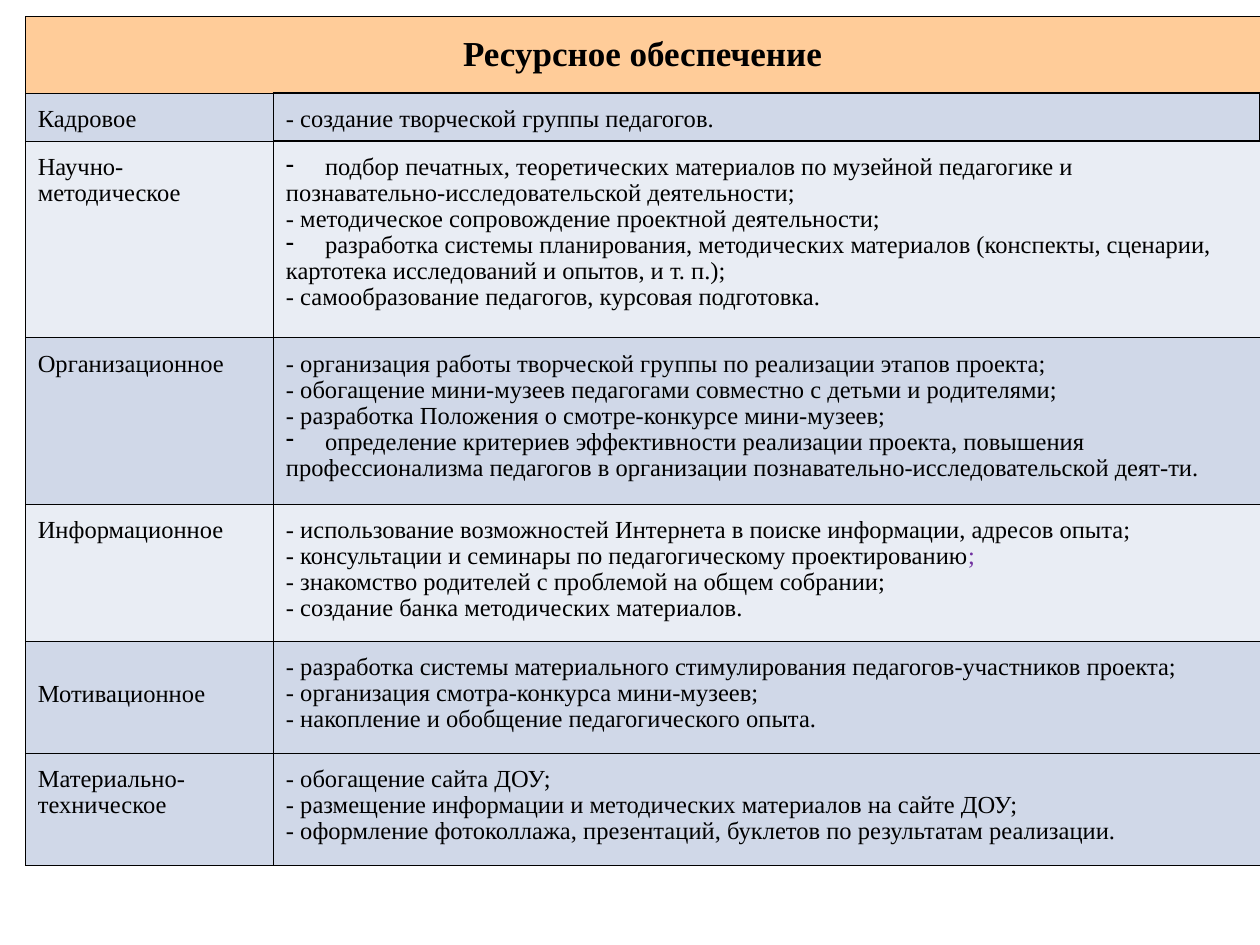
"""Build the slide with the table of project resources."""
from dataclasses import dataclass

import lxml.etree
import pptx
import pptx.dml.color
import pptx.enum.text
import pptx.oxml.ns
import pptx.util

Inches = pptx.util.Inches
Pt = pptx.util.Pt
FONT = "Times New Roman"
BLACK, PURPLE = "000000", "7030A0"
PEACH, BLUE, PALE = "FFCC99", "D0D8E8", "E9EDF4"
THIN, THICK = 0.23, 1
BULLET_INDENT = 0.31
TOP_INSET, LINE_HEIGHT = 0.11, 0.21


@dataclass
class Line:
    text: str
    bulleted: bool = False
    tail: str = ""


@dataclass
class Resource:
    name: str
    height: float
    fill: str
    lines: list[Line]
    name_inset: float = TOP_INSET


RESOURCES = [
    Resource("Кадровое", 0.38, BLUE, [Line("- создание творческой группы педагогов.")]),
    Resource("Научно-методическое", 1.56, PALE, [
        Line("подбор печатных, теоретических материалов по музейной педагогике и", True),
        Line("познавательно-исследовательской деятельности;"),
        Line("- методическое сопровождение проектной деятельности;"),
        Line("разработка системы планирования, методических материалов (конспекты, сценарии,", True),
        Line("картотека исследований и опытов, и т. п.);"),
        Line("- самообразование педагогов, курсовая подготовка."),
    ]),
    Resource("Организационное", 1.32, BLUE, [
        Line("- организация работы творческой группы по реализации этапов проекта;"),
        Line("- обогащение мини-музеев педагогами совместно с детьми и родителями;"),
        Line("- разработка Положения о смотре-конкурсе мини-музеев;"),
        Line("определение критериев эффективности реализации проекта, повышения", True),
        Line("профессионализма педагогов в организации познавательно-исследовательской деят-ти."),
    ]),
    Resource("Информационное", 1.09, PALE, [
        Line("- использование возможностей Интернета в поиске информации, адресов опыта;"),
        Line("- консультации и семинары по педагогическому проектированию", tail=";"),
        Line("- знакомство родителей с проблемой на общем собрании;"),
        Line("- создание банка методических материалов."),
    ]),
    Resource("Мотивационное", 0.89, BLUE, [
        Line("- разработка системы материального стимулирования педагогов-участников проекта;"),
        Line("- организация смотра-конкурса мини-музеев;"),
        Line("- накопление и обобщение педагогического опыта."),
    ], TOP_INSET + LINE_HEIGHT),
    Resource("Материально-техническое", 0.89, BLUE, [
        Line("- обогащение сайта ДОУ;"),
        Line("- размещение информации и методических материалов на сайте ДОУ;"),
        Line("- оформление фотоколлажа, презентаций, буклетов по результатам реализации."),
    ]),
]


def color(value: str) -> pptx.dml.color.RGBColor:
    return pptx.dml.color.RGBColor.from_string(value)


def add_child(parent, tag: str, **attributes: str):
    return lxml.etree.SubElement(parent, pptx.oxml.ns.qn(tag), **attributes)


def style_cell(cell, fill: str, top_inset: float, thick_sides: str = "") -> None:
    cell.margin_left = cell.margin_right = Inches(0.1)
    cell.margin_top, cell.margin_bottom = Inches(top_inset), Inches(0.05)
    properties = cell._tc.get_or_add_tcPr()
    for side in "LRTB":
        width = THICK if side in thick_sides else THIN
        border = add_child(properties, f"a:ln{side}", w=str(int(Pt(width))))
        add_child(add_child(border, "a:solidFill"), "a:srgbClr", val=BLACK)
    cell.fill.solid()
    cell.fill.fore_color.rgb = color(fill)


def add_span(para, text: str, size: int = 14, bold: bool = False, ink: str = BLACK) -> None:
    span = para.add_run()
    span.text = text
    span.font.name, span.font.size, span.font.bold = FONT, Pt(size), bold
    span.font.color.rgb = color(ink)


def write_lines(cell, lines: list[Line]) -> None:
    frame = cell.text_frame
    for index, line in enumerate(lines):
        para = frame.add_paragraph() if index else frame.paragraphs[0]
        para.line_spacing = 0.96
        if line.bulleted:
            properties = para._p.get_or_add_pPr()
            indent = int(Inches(BULLET_INDENT))
            properties.set("marL", str(indent))
            properties.set("indent", str(-indent))
            add_child(properties, "a:buChar", char="-")
        add_span(para, line.text)
        if line.tail:
            add_span(para, line.tail, ink=PURPLE)


def add_resource_table(page) -> None:
    heights = [0.61] + [resource.height for resource in RESOURCES]
    table = page.shapes.add_table(
        len(heights), 2, Inches(0.2), Inches(0.13), Inches(9.8), Inches(sum(heights))
    ).table
    table.first_row = table.horz_banding = False
    for column, width in zip(table.columns, (1.97, 7.83)):
        column.width = Inches(width)
    for row, height in zip(table.rows, heights):
        row.height = Inches(height)

    header = table.cell(0, 0)
    header.merge(table.cell(0, 1))
    style_cell(header, PEACH, 0.15)
    title = header.text_frame.paragraphs[0]
    title.alignment = pptx.enum.text.PP_ALIGN.CENTER
    add_span(title, "Ресурсное обеспечение", 20, True)

    thick_sides = {(1, 0): "R", (1, 1): "LRTB", (2, 1): "T"}
    for row, resource in enumerate(RESOURCES, start=1):
        name, details = table.cell(row, 0), table.cell(row, 1)
        style_cell(name, resource.fill, resource.name_inset, thick_sides.get((row, 0), ""))
        style_cell(details, resource.fill, TOP_INSET, thick_sides.get((row, 1), ""))
        write_lines(name, [Line(resource.name)])
        write_lines(details, resource.lines)


def main() -> None:
    deck = pptx.Presentation()
    deck.slide_width, deck.slide_height = Inches(10), Inches(7.5)
    page = deck.slides.add_slide(deck.slide_layouts[6])
    add_resource_table(page)
    deck.save("out.pptx")


if __name__ == "__main__":
    main()
